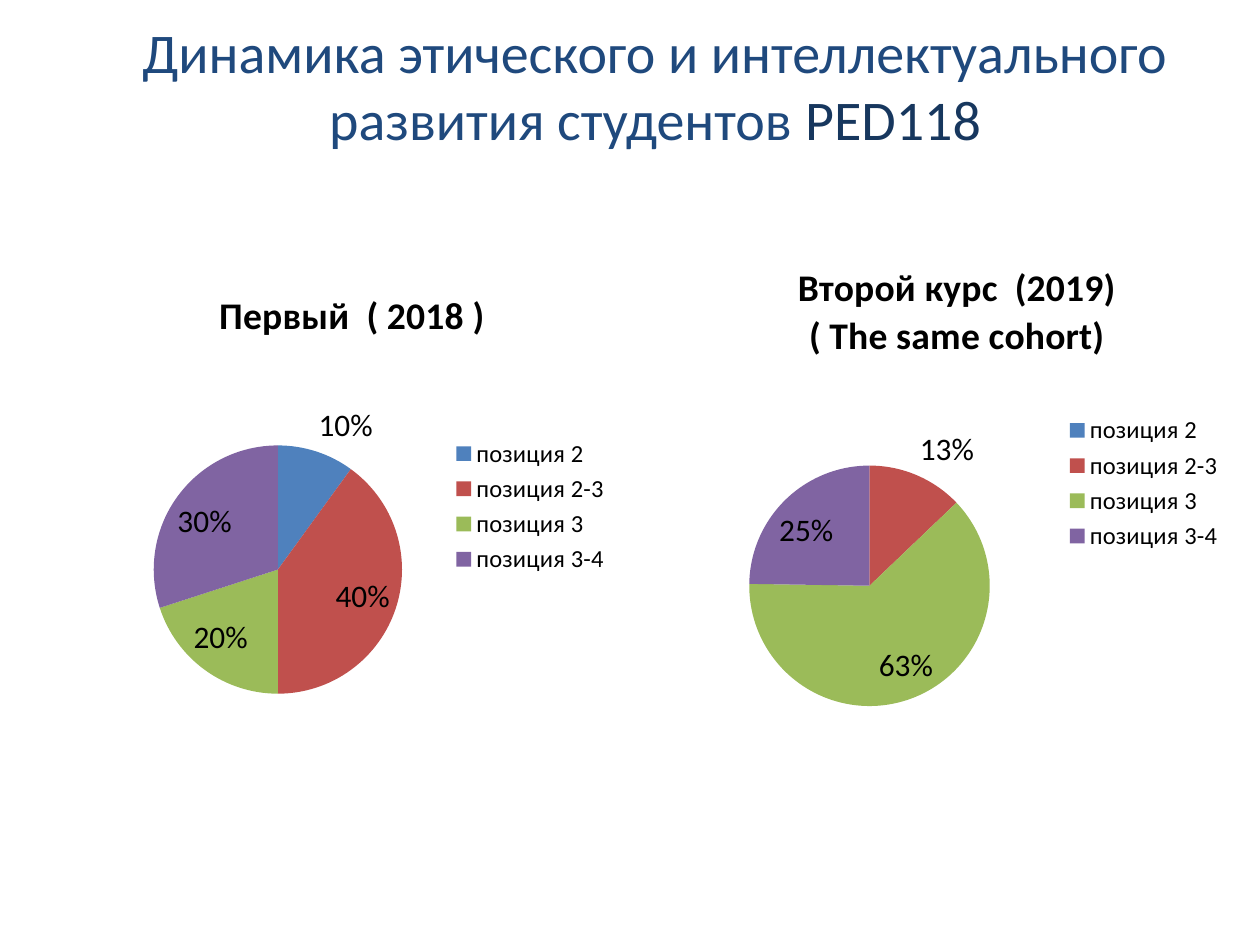
import pptx
import pptx.chart.data
import pptx.dml.color
import pptx.enum.chart
import pptx.enum.text
import pptx.oxml
import pptx.oxml.ns
import pptx.util

Pt = pptx.util.Pt
RGB = pptx.dml.color.RGBColor
FONT = "Calibri"
BLACK = RGB(0x00, 0x00, 0x00)
BLUE = RGB(0x1F, 0x49, 0x7D)
NAVY = RGB(0x17, 0x37, 0x5E)
FILLS = [RGB(0x4F, 0x81, 0xBD), RGB(0xC0, 0x50, 0x4D),
         RGB(0x9B, 0xBB, 0x59), RGB(0x80, 0x64, 0xA2)]
CATS = ["позиция 2", "позиция 2-3", "позиция 3", "позиция 3-4"]


def set_font(font, size, color=BLACK, bold=False):
    font.name = FONT
    font.size = Pt(size)
    font.bold = bold
    font.color.rgb = color


def make_layout(inner=False, **parts):
    items = [("layoutTarget", "inner")] if inner else []
    items += [("xMode", "edge"), ("yMode", "edge"), *parts.items()]
    body = "".join(f'<c:{tag} val="{val}"/>' for tag, val in items)
    return pptx.oxml.parse_xml(
        f'<c:layout {pptx.oxml.ns.nsdecls("c")}>'
        f"<c:manualLayout>{body}</c:manualLayout></c:layout>")


def put_layout(elem, layout, after=None):
    for old in elem.findall(pptx.oxml.ns.qn("c:layout")):
        elem.remove(old)
    if after is None:
        elem.insert(0, layout)
    else:
        after.addnext(layout)


def add_title(slide, box):
    title = slide.shapes.title
    title.left, title.top, title.width, title.height = map(Pt, box)
    frame = title.text_frame
    frame.word_wrap = True
    frame.auto_size = pptx.enum.text.MSO_AUTO_SIZE.NONE
    frame.vertical_anchor = pptx.enum.text.MSO_ANCHOR.MIDDLE
    frame.margin_bottom = Pt(41.5)
    para = frame.paragraphs[0]
    para.alignment = pptx.enum.text.PP_ALIGN.CENTER
    for text, color in [
            ("Динамика этического и интеллектуального развития студентов ", BLUE),
            ("PED118", NAVY)]:
        run = para.add_run()
        run.text = text
        set_font(run.font, 32, color)


def add_pie(slide, box, lines, vals, head, plot):
    data = pptx.chart.data.CategoryChartData()
    data.categories = CATS
    data.add_series("Series 1", vals)
    chart = slide.shapes.add_chart(
        pptx.enum.chart.XL_CHART_TYPE.PIE, *map(Pt, box), data).chart
    set_font(chart.font, 17.9)

    chart.has_title = True
    frame = chart.chart_title.text_frame
    for i, line in enumerate(lines):
        para = frame.add_paragraph() if i else frame.paragraphs[0]
        para.text = line
        para.alignment = pptx.enum.text.PP_ALIGN.CENTER
        set_font(para.font, 21.5, bold=True)
    title = chart.chart_title._element
    put_layout(title, make_layout(x=head[0], y=head[1]),
               title.find(pptx.oxml.ns.qn("c:tx")))

    chart.has_legend = True
    chart.legend.position = pptx.enum.chart.XL_LEGEND_POSITION.RIGHT
    chart.legend.include_in_layout = False
    set_font(chart.legend.font, 14)

    pie = chart.plots[0]
    pie.vary_by_categories = True
    for i, color in enumerate(FILLS):
        fill = pie.series[0].points[i].format.fill
        fill.solid()
        fill.fore_color.rgb = color
    pie.has_data_labels = True
    tags = pie.data_labels
    tags.show_percentage = False
    tags.show_value = True
    tags.number_format = '0"%";;'
    tags.number_format_is_linked = False
    tags.position = pptx.enum.chart.XL_LABEL_POSITION.BEST_FIT
    set_font(tags.font, 17.9)

    x, y, w, h = plot
    area = chart._chartSpace.chart.plotArea
    put_layout(area, make_layout(inner=True, x=x, y=y, w=w, h=h))


def main():
    deck = pptx.Presentation()
    deck.slide_width, deck.slide_height = Pt(720), Pt(540)
    slide = deck.slides.add_slide(deck.slide_layouts[5])
    add_pie(slide, (43.2, 155.5, 312.5, 267.8), ["Первый  ( 2018 )"],
            [10, 40, 20, 30], (0.25, 0.02), (0.14, 0.37, 0.46, 0.53))
    add_title(slide, (50.4, 22.3, 648, 90))
    add_pie(slide, (386.6, 139.7, 319.7, 272.9),
            ["Второй курс  (2019)", "( The same cohort)"],
            [0, 13, 63, 25], (0.21, 0.03), (0.13, 0.46, 0.43, 0.51))
    deck.save("out.pptx")


if __name__ == "__main__":
    main()
